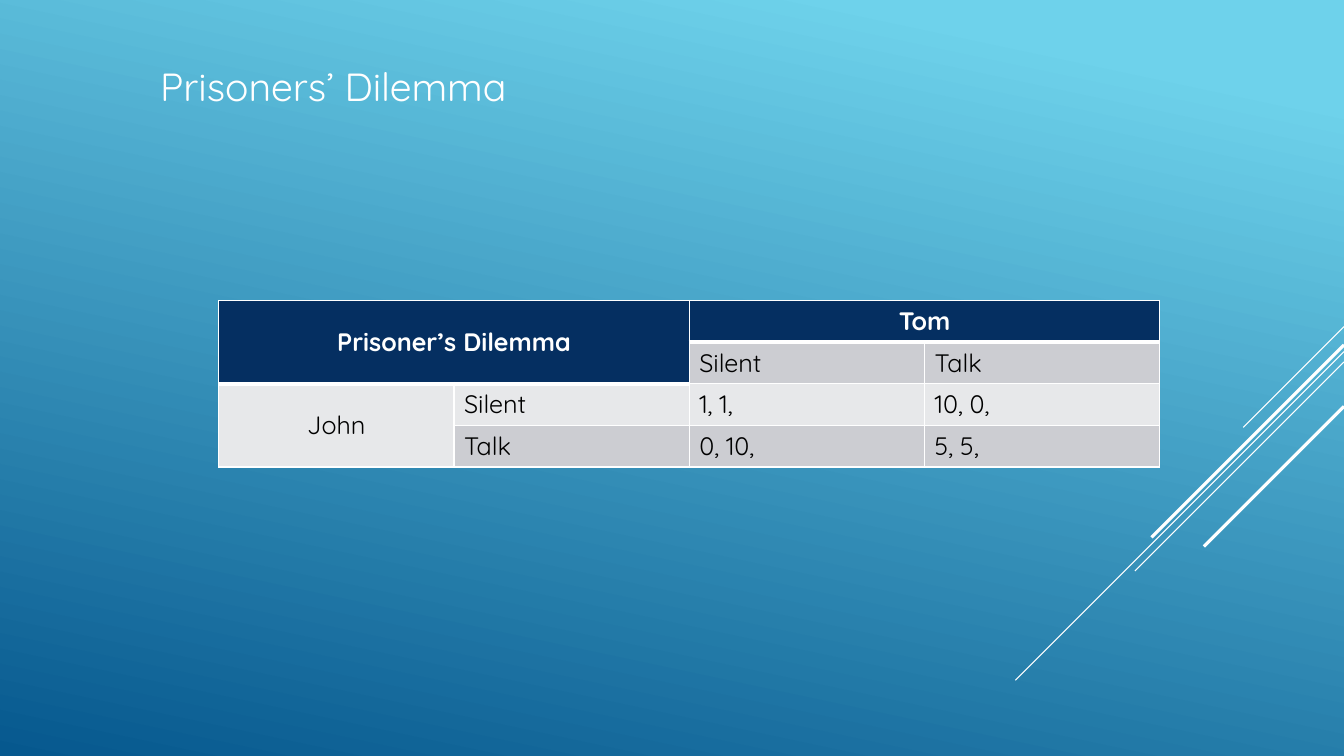
"""Build a slide with the payoff table of the Prisoners' Dilemma."""
from lxml.etree import SubElement
from pptx import Presentation
from pptx.dml.color import RGBColor
from pptx.enum.shapes import MSO_CONNECTOR as Connector
from pptx.enum.text import MSO_ANCHOR as Anchor, MSO_AUTO_SIZE as AutoSize, PP_ALIGN as Align
from pptx.oxml.ns import qn
from pptx.util import Cm, Pt

WHITE = RGBColor(0xFF, 0xFF, 0xFF)
BLACK = RGBColor(0x00, 0x00, 0x00)
NAVY = RGBColor(0x05, 0x2F, 0x61)
DARK_BAND = RGBColor(0xCC, 0xCD, 0xD2)
LIGHT_BAND = RGBColor(0xE7, 0xE8, 0xEA)
SKY = RGBColor(0x6E, 0xD2, 0xEB)
OCEAN = RGBColor(0x06, 0x58, 0x8E)

FONT = "Quicksand"
PAGE_WIDTH, PAGE_HEIGHT = 33.87, 19.05
COLUMN_WIDTH, ROW_HEIGHT = 5.93, 1.05
STREAKS = [(8.23, 2.54, 0.75), (8.86, 8.28, 0.75), (9.12, 5.27, 0.75),
           (8.69, 4.85, 2.25), (10.24, 3.53, 2.25)]
PAYOFFS = [
    ["Prisoner’s Dilemma", "", "Tom", ""],
    ["", "", "Silent", "Talk"],
    ["John", "Silent", "1, 1,", "10, 0,"],
    ["", "Talk", "0, 10,", "5, 5,"],
]
MERGES = [((0, 0), (1, 1)), ((0, 2), (0, 3)), ((2, 0), (3, 0))]


def write_text(frame, text, size=18, color=BLACK, bold=False, align=Align.LEFT):
    """Put one formatted span of text into a text frame."""
    para = frame.paragraphs[0]
    para.alignment = align
    span = para.add_run()
    span.text = text
    span.font.name = FONT
    span.font.size = Pt(size)
    span.font.bold = bold
    span.font.color.rgb = color


def paint_background(page):
    """Fill the page with a gradient from sky to ocean blue."""
    fill = page.background.fill
    fill.gradient()
    fill.gradient_angle = 258
    for stop, color, position in zip(fill.gradient_stops, (SKY, OCEAN), (0.1, 1)):
        stop.color.rgb = color
        stop.position = position


def add_streak(page, top, length, weight):
    """Draw a diagonal line down and left from the right edge."""
    streak = page.shapes.add_connector(
        Connector.STRAIGHT, Cm(PAGE_WIDTH), Cm(top),
        Cm(PAGE_WIDTH - length), Cm(top + length))
    streak.line.color.rgb = WHITE
    streak.line.width = Pt(weight)
    SubElement(streak._element.spPr, qn("a:effectLst"))


def add_title(page, text):
    """Move the title placeholder into place and fill it."""
    title = page.shapes.title
    title.left, title.top, title.width, title.height = Cm(3.78), Cm(1.45), Cm(27.18), Cm(1.45)
    frame = title.text_frame
    frame.word_wrap = True
    frame.auto_size = AutoSize.SHAPE_TO_FIT_TEXT
    frame.vertical_anchor = Anchor.TOP
    write_text(frame, text, size=28, color=WHITE)


def set_borders(cell, **weights):
    """Give a cell white borders with a weight for each side."""
    properties = cell._tc.get_or_add_tcPr()
    for side, weight in weights.items():
        line = SubElement(properties, qn(f"a:ln{side}"), w=str(Pt(weight)))
        fill = SubElement(line, qn("a:solidFill"))
        SubElement(fill, qn("a:srgbClr"), val=str(WHITE))


def format_cell(cell, row, column, text):
    """Set the borders, fill and text of one payoff cell."""
    header_rows = 2 if column < 2 else 1
    is_header = row < header_rows
    set_borders(cell, L=1, R=1, T=3 if row == header_rows else 1, B=3 if is_header else 1)
    cell.fill.solid()
    cell.fill.fore_color.rgb = NAVY if is_header else (DARK_BAND if row % 2 else LIGHT_BAND)
    if text:
        centred = is_header or column == 0
        cell.vertical_anchor = Anchor.MIDDLE if column == 0 else Anchor.TOP
        write_text(cell.text_frame, text, color=WHITE if is_header else BLACK,
                   bold=is_header, align=Align.CENTER if centred else Align.LEFT)


def add_payoffs(page, rows, merges):
    """Add the payoff table with its merged headings."""
    count, width = len(rows), len(rows[0])
    table = page.shapes.add_table(
        count, width, Cm(5.51), Cm(7.57),
        Cm(COLUMN_WIDTH * width), Cm(ROW_HEIGHT * count)).table
    for row, texts in enumerate(rows):
        table.rows[row].height = Cm(ROW_HEIGHT)
        for column, text in enumerate(texts):
            format_cell(table.cell(row, column), row, column, text)
    for first, last in merges:
        table.cell(*first).merge(table.cell(*last))


def main():
    """Build the deck and save it."""
    deck = Presentation()
    deck.slide_width, deck.slide_height = Cm(PAGE_WIDTH), Cm(PAGE_HEIGHT)
    page = deck.slides.add_slide(deck.slide_layouts[5])
    paint_background(page)
    for top, length, weight in STREAKS:
        add_streak(page, top, length, weight)
    add_payoffs(page, PAYOFFS, MERGES)
    add_title(page, "Prisoners’ Dilemma")
    deck.save("out.pptx")


if __name__ == "__main__":
    main()
